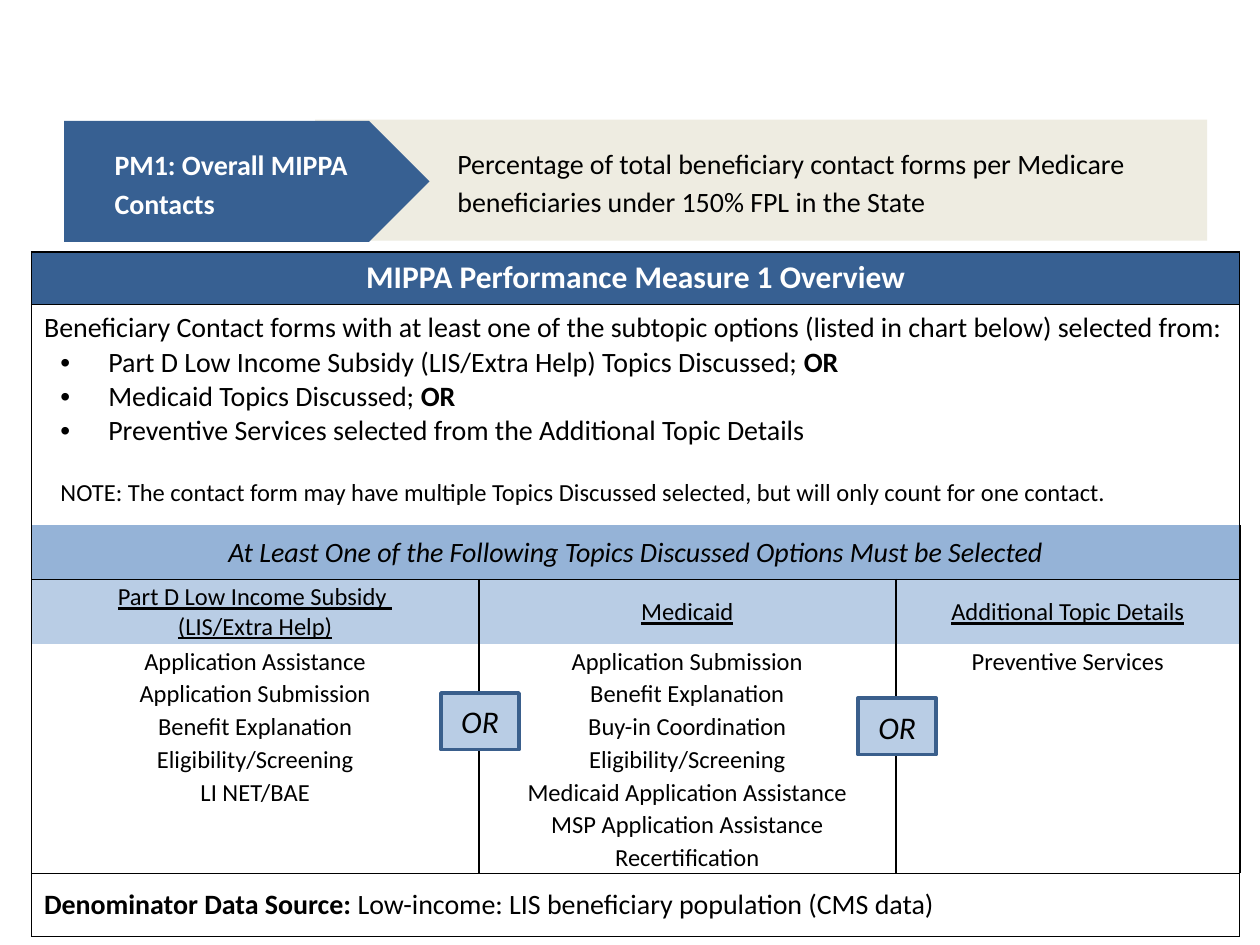
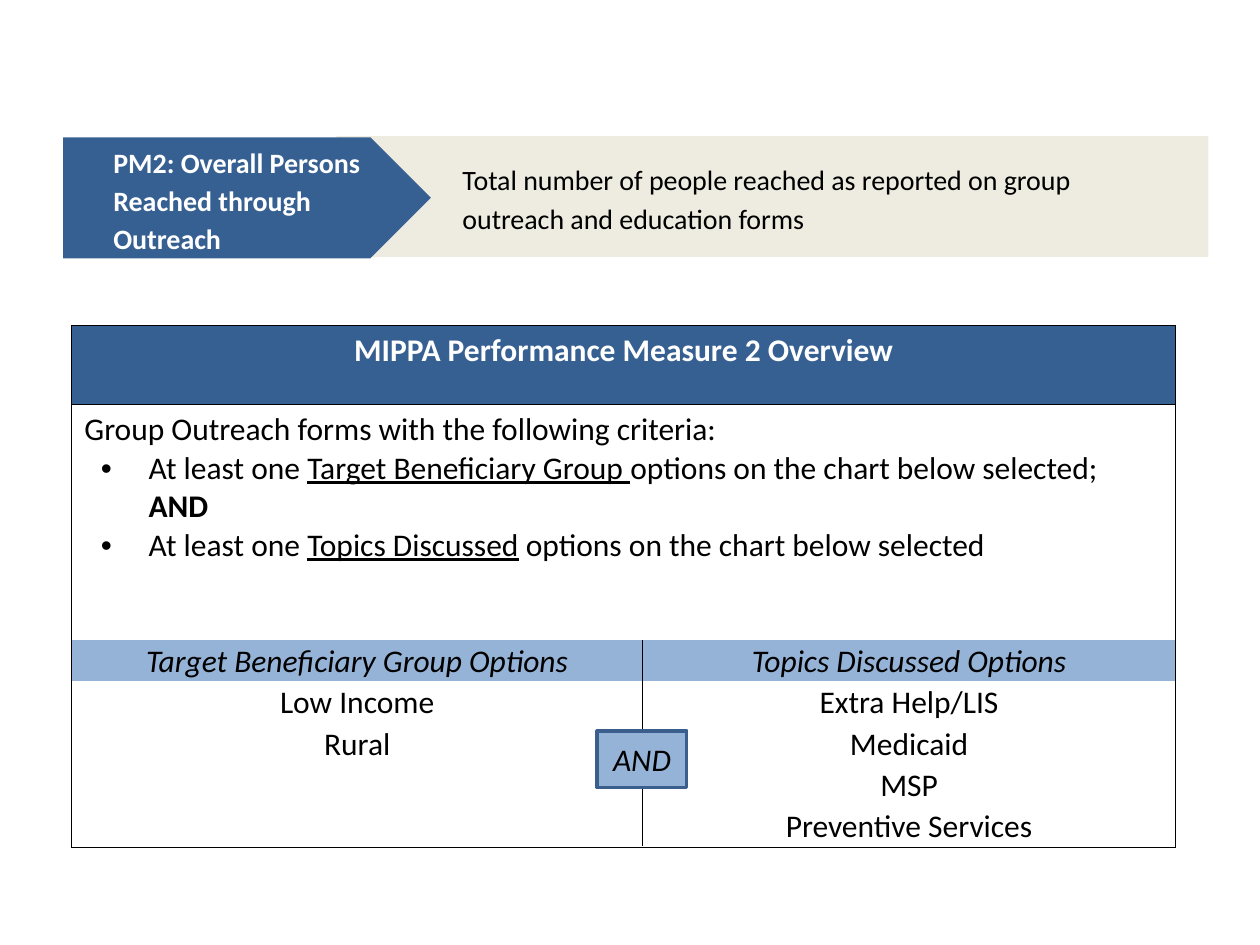
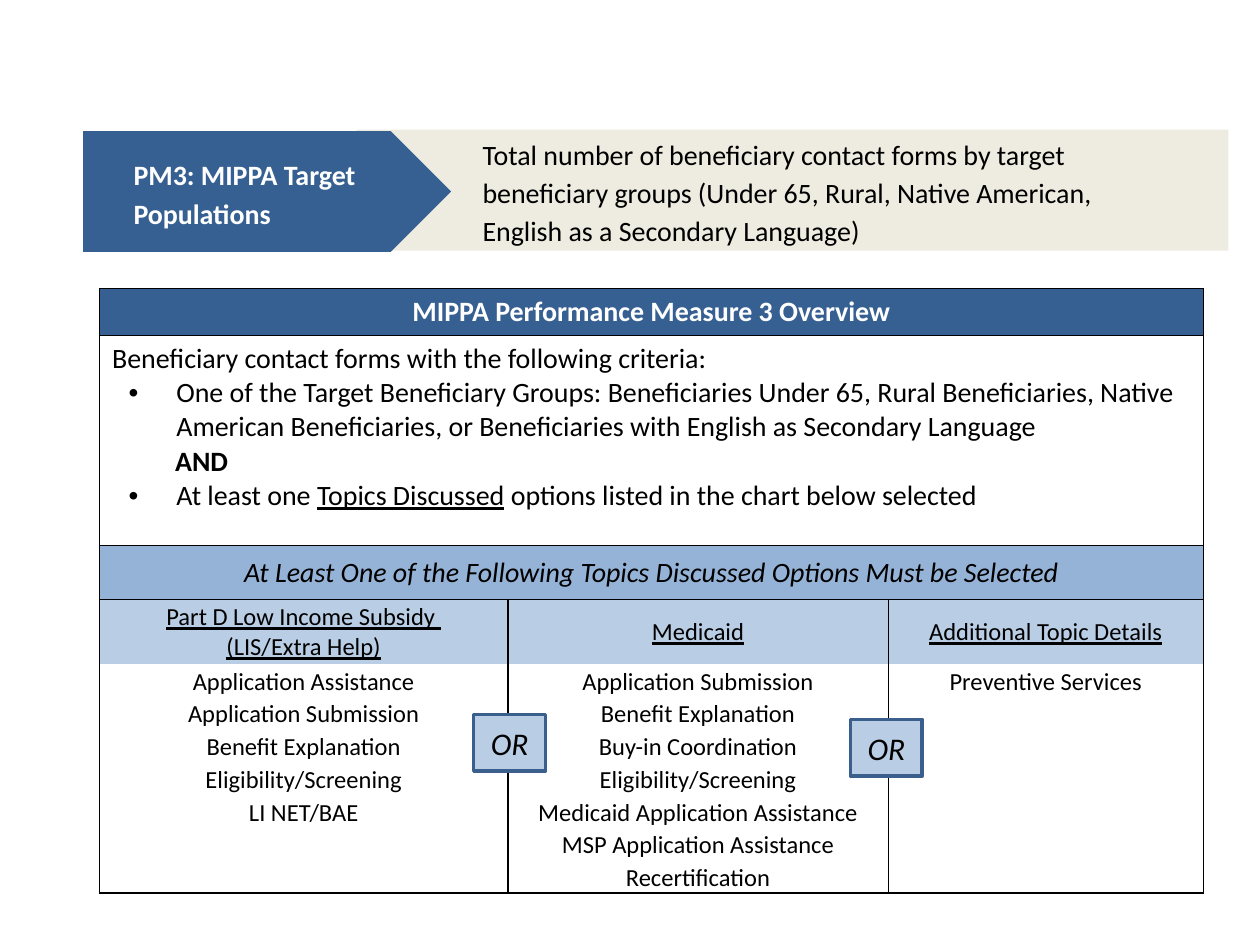
from lxml.etree import SubElement
from pptx import Presentation
from pptx.dml.color import RGBColor
from pptx.enum.shapes import MSO_SHAPE
from pptx.enum.text import MSO_ANCHOR, PP_ALIGN
from pptx.oxml.ns import qn
from pptx.util import Inches, Pt

NAVY = RGBColor(0x37, 0x60, 0x92)
EDGE = RGBColor(0x3A, 0x5F, 0x8C)
BLUE = RGBColor(0x95, 0xB3, 0xD7)
PALE = RGBColor(0xB9, 0xCD, 0xE5)
CREAM = RGBColor(0xEE, 0xEC, 0xE1)
WHITE = RGBColor(0xFF, 0xFF, 0xFF)
BLACK = RGBColor(0, 0, 0)
FONT = "Calibri"
CELL_INSETS = (0.1, 0.05, 0.1, 0.05)
TIGHT_INSETS = (0.01, 0.01, 0.01, 0)
TOPICS_HEADING = "At Least One of the Following Topics Discussed Options Must be Selected"
TOPIC_HEIGHTS = [0.43, 0.51] + [0.26] * 7
TOPICS = [
    ("Part D Low Income Subsidy \n(LIS/Extra Help)",
     ["Application Assistance", "Application Submission", "Benefit Explanation",
      "Eligibility/Screening", "LI NET/BAE"]),
    ("Medicaid",
     ["Application Submission", "Benefit Explanation", "Buy-in Coordination",
      "Eligibility/Screening", "Medicaid Application Assistance",
      "MSP Application Assistance", "Recertification"]),
    ("Additional Topic Details", ["Preventive Services"]),
]


class Deck:
    def __init__(self):
        self.prs = Presentation()
        self.prs.slide_width = Inches(10)
        self.prs.slide_height = Inches(7.5)
        self.s = None

    def new_slide(self):
        self.s = self.prs.slides.add_slide(self.prs.slide_layouts[6])

    def style(self, r, size, color=BLACK, marks=""):
        r.font.name = FONT
        r.font.size = Pt(size)
        r.font.color.rgb = color
        r.font.bold = "b" in marks
        r.font.italic = "i" in marks
        r.font.underline = "u" in marks

    def put_text(self, tf, text, size, color=BLACK, marks="", align=PP_ALIGN.LEFT, spacing=None):
        tf.text = text
        for p in tf.paragraphs:
            p.alignment = align
            if spacing:
                p.line_spacing = spacing
            for r in p.runs:
                self.style(r, size, color, marks)
            if not p.runs:
                SubElement(p._p, qn("a:endParaRPr"), sz=str(size * 100))

    def indent(self, p, left, hanging=0):
        pPr = p._p.get_or_add_pPr()
        pPr.set("marL", str(Inches(left)))
        pPr.set("indent", str(-Inches(hanging)))
        if hanging:
            SubElement(pPr, qn("a:buFont"), typeface="Arial")
            SubElement(pPr, qn("a:buChar"), char="•")

    def put_runs(self, tf, paragraphs, size):
        for i, (left, hanging, runs) in enumerate(paragraphs):
            p = tf.paragraphs[0] if i == 0 else tf.add_paragraph()
            self.indent(p, left, hanging)
            for text, marks in runs:
                r = p.add_run()
                r.text = text
                self.style(r, size, marks=marks)

    def shape(self, kind, left, top, width, height, fill, line=None):
        sp = self.s.shapes.add_shape(kind, Inches(left), Inches(top), Inches(width), Inches(height))
        sp.shadow.inherit = False
        sp.fill.solid()
        sp.fill.fore_color.rgb = fill
        if line:
            sp.line.color.rgb = line
            sp.line.width = Pt(2)
        else:
            sp.line.fill.background()
        sp.text_frame.word_wrap = True
        sp.text_frame.vertical_anchor = MSO_ANCHOR.MIDDLE
        return sp

    def insets(self, target, values):
        left, top, right, bottom = map(Inches, values)
        target.margin_left, target.margin_top = left, top
        target.margin_right, target.margin_bottom = right, bottom

    def banner(self, title, text, top, plate, bar, text_left=1):
        sp = self.shape(MSO_SHAPE.RECTANGLE, bar[0], top, bar[1], 0.96, CREAM)
        self.insets(sp.text_frame, (text_left, 0.05, 0.4, 0.05))
        self.put_text(sp.text_frame, text, 16, spacing=1.14)
        sp.text_frame.paragraphs[0].space_after = Pt(6)
        sp = self.shape(MSO_SHAPE.PENTAGON, plate[0], top + 0.01, plate[1], 0.96, NAVY)
        self.insets(sp.text_frame, (0.4, 0.05, 0.3, 0.05))
        self.put_text(sp.text_frame, title, 16, WHITE, "b", spacing=1.14)

    def badge(self, text, left, top, width, fill):
        sp = self.shape(MSO_SHAPE.RECTANGLE, left, top, width, 0.45, fill, EDGE)
        self.put_text(sp.text_frame, text, 18, marks="i", align=PP_ALIGN.CENTER)

    def table(self, left, top, widths, heights):
        frame = self.s.shapes.add_table(len(heights), len(widths), Inches(left), Inches(top),
                                        Inches(sum(widths)), Inches(sum(heights)))
        tbl = frame.table
        tbl.first_row = tbl.horz_banding = False
        for col, width in zip(tbl.columns, widths):
            col.width = Inches(width)
        for row, height in zip(tbl.rows, heights):
            row.height = Inches(height)
        return tbl

    def dress(self, cell, fill, sides, points, insets, anchor=MSO_ANCHOR.TOP):
        self.insets(cell, insets)
        cell.vertical_anchor = anchor
        tcPr = cell._tc.get_or_add_tcPr()
        for side in "LRTB":
            ln = SubElement(tcPr, qn(f"a:ln{side}"), w=str(Pt(points)))
            if side in sides:
                SubElement(SubElement(ln, qn("a:solidFill")), qn("a:srgbClr"), val=str(BLACK))
            else:
                SubElement(ln, qn("a:noFill"))
        if fill is None:
            cell.fill.background()
        else:
            cell.fill.solid()
            cell.fill.fore_color.rgb = fill

    def overview(self, title, criteria, left, top, widths, heights, title_size, size):
        tbl = self.table(left, top, widths, heights)
        for i in range(len(heights)):
            for cell in tbl.rows[i].cells:
                self.dress(cell, WHITE if i else NAVY, "LRTB", 0.75, CELL_INSETS,
                           MSO_ANCHOR.MIDDLE if i > 1 else MSO_ANCHOR.TOP)
        if len(widths) > 1:
            for i in range(2):
                tbl.cell(i, 0).merge(tbl.cell(i, len(widths) - 1))
        self.put_text(tbl.cell(0, 0).text_frame, title, title_size, WHITE, "b", PP_ALIGN.CENTER)
        self.put_runs(tbl.cell(1, 0).text_frame, criteria, size)
        return tbl

    def topics(self, left, top, widths, framed=False):
        tbl = self.table(left, top, widths, TOPIC_HEIGHTS)
        last = len(TOPIC_HEIGHTS) - 1
        for i in range(last + 1):
            for j, (title, items) in enumerate(TOPICS):
                sides = "LR" if j or framed else "R"
                sides += "T" if i == 1 or (framed and i == 0) else ""
                sides += "B" if i == 0 or (framed and i == last) else ""
                cell = tbl.cell(i, j)
                self.dress(cell, (BLUE, PALE)[i] if i < 2 else None, sides, 1, TIGHT_INSETS,
                           MSO_ANCHOR.MIDDLE if i < 2 else MSO_ANCHOR.BOTTOM)
                if i:
                    text = ([title] + items + [""] * last)[i - 1]
                    self.put_text(cell.text_frame, text, 14, marks="u" if i == 1 else "",
                                  align=PP_ALIGN.CENTER)
        tbl.cell(0, 0).merge(tbl.cell(0, len(widths) - 1))
        self.put_text(tbl.cell(0, 0).text_frame, TOPICS_HEADING, 16, marks="i",
                      align=PP_ALIGN.CENTER)

    def option_lists(self, left, top, widths, rows):
        tbl = self.table(left, top, widths, [0.32] * len(rows))
        for i, row in enumerate(rows):
            for j, text in enumerate(row):
                cell = tbl.cell(i, j)
                self.dress(cell, None if i else BLUE, "LR" if j else "R", 1, (0.07, 0, 0.07, 0))
                self.put_text(cell.text_frame, text, 18, marks="" if i else "i",
                              align=PP_ALIGN.CENTER, spacing=1.07)


def bullet(*runs):
    return 0.51, 0.38, runs


def plain(*runs, left=0):
    return left, 0, runs


def contacts(deck):
    deck.new_slide()
    tbl = deck.overview("MIPPA Performance Measure 1 Overview", [
        plain(("Beneficiary Contact forms with at least one of the subtopic options "
               "(listed in chart below) selected from:", "")),
        bullet(("Part D Low Income Subsidy (LIS/Extra Help) Topics Discussed; ", ""), ("OR", "b")),
        bullet(("Medicaid Topics Discussed; ", ""), ("OR", "b")),
        bullet(("Preventive Services selected from the Additional Topic Details", "")),
        plain(("NOTE: The contact form may have multiple Topics Discussed selected, "
               "but will only count for one contact.", ""), left=0.13),
    ], 0.25, 2, [9.59], [0.42, 2.37, 2.14, 0.5], 18, 16)
    note = tbl.cell(1, 0).text_frame.paragraphs[-1]
    note.space_before = Pt(17)
    note.runs[0].font.size = Pt(14)
    deck.put_runs(tbl.cell(3, 0).text_frame, [
        plain(("Denominator Data Source: ", "b"),
              ("Low-income: LIS beneficiary population (CMS data)", "")),
    ], 16)
    deck.topics(0.25, 4.17, [3.55, 3.31, 2.73])
    deck.badge("OR", 3.5, 5.5, 0.62, PALE)
    deck.badge("OR", 6.81, 5.54, 0.62, PALE)
    deck.banner("PM1: Overall MIPPA Contacts",
                "Percentage of total beneficiary contact forms per Medicare "
                "beneficiaries under 150% FPL in the State",
                0.95, (0.51, 2.9), (2.5, 7.08), 1.13)


def outreach(deck):
    deck.new_slide()
    deck.overview("MIPPA Performance Measure 2 Overview", [
        plain(("Group Outreach forms with the following criteria:", "")),
        bullet(("At least one ", ""), ("Target Beneficiary Group ", "u"),
               ("options on the chart below selected; ", ""), ("AND", "b")),
        bullet(("At least one ", ""), ("Topics Discussed", "u"),
               (" options on the chart below selected", "")),
    ], 0.57, 2.58, [8.76], [0.63, 2.1, 1.42], 18, 18)
    deck.option_lists(0.57, 5.08, [4.53, 4.23], [
        ("Target Beneficiary Group Options", "Topics Discussed Options"),
        ("Low Income", "Extra Help/LIS"),
        ("Rural", "Medicaid"),
        ("", "MSP"),
        ("", "Preventive Services"),
    ])
    deck.badge("AND", 4.74, 5.8, 0.71, BLUE)
    deck.banner("PM2: Overall Persons Reached through Outreach",
                "Total number of people reached as reported on group outreach and education forms",
                1.08, (0.5, 2.92), (2.67, 6.92))


def populations(deck):
    deck.new_slide()
    deck.overview("MIPPA Performance Measure 3 Overview", [
        plain(("Beneficiary contact forms with the following criteria:", "")),
        bullet(("One of the Target Beneficiary Groups: Beneficiaries Under 65, Rural Beneficiaries, "
                "Native American Beneficiaries, or Beneficiaries with English as Secondary Language",
                "")),
        plain(("AND", "b"), left=0.5),
        bullet(("At least one ", ""), ("Topics Discussed", "u"),
               (" options listed in the chart below selected", "")),
    ], 0.79, 2.29, [2.9, 5.86], [0.37, 1.8, 0.47], 16, 16)
    deck.banner("PM3: MIPPA Target Populations",
                "Total number of beneficiary contact forms by target beneficiary groups "
                "(Under 65, Rural, Native American, English as a Secondary Language)",
                1.03, (0.66, 2.92), (2.83, 6.92))
    deck.topics(0.79, 4.33, [3.24, 3.02, 2.5], framed=True)
    deck.badge("OR", 3.76, 5.67, 0.57, PALE)
    deck.badge("OR", 6.75, 5.71, 0.57, PALE)


def main():
    deck = Deck()
    contacts(deck)
    outreach(deck)
    populations(deck)
    deck.prs.save("out.pptx")


if __name__ == "__main__":
    main()
